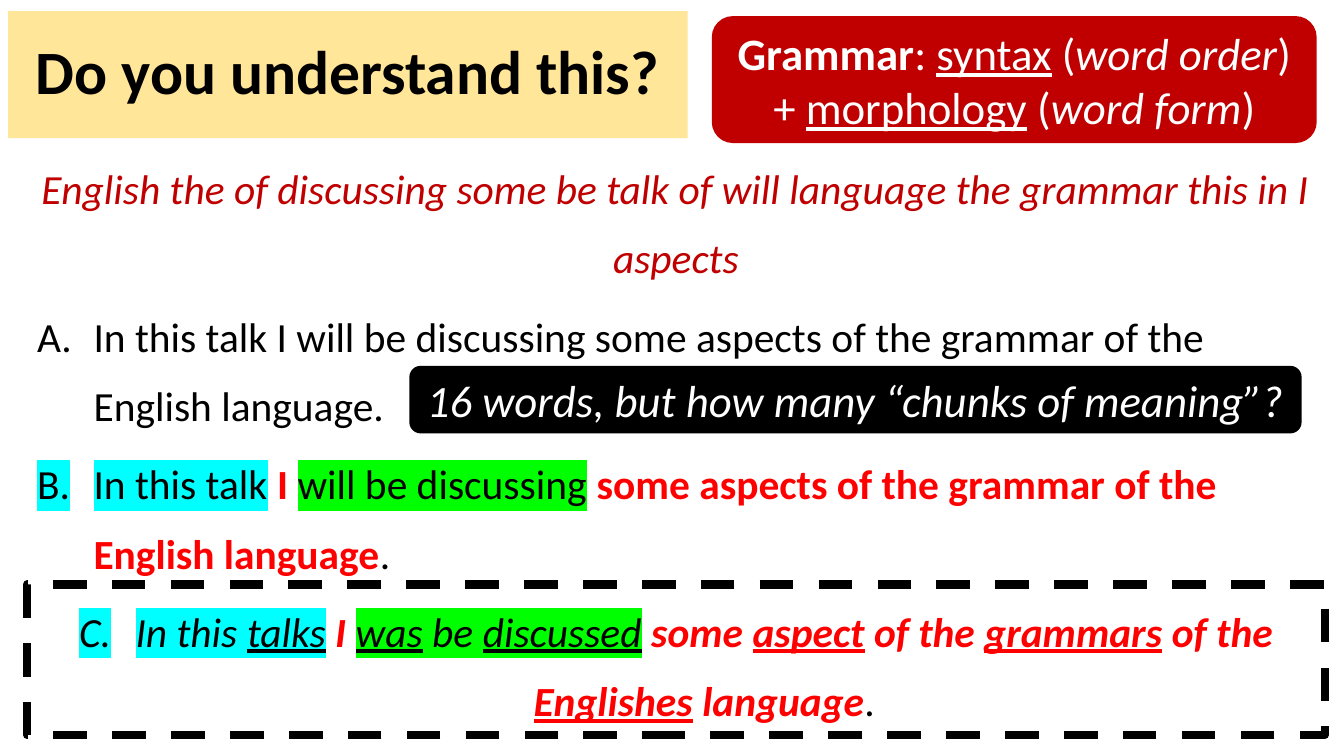
from lxml import etree
from pptx import Presentation
from pptx.dml.color import RGBColor
from pptx.enum.dml import MSO_LINE
from pptx.enum.shapes import MSO_SHAPE
from pptx.enum.text import MSO_ANCHOR, PP_ALIGN
from pptx.oxml.ns import qn
from pptx.util import Inches, Pt

CENTER, LEFT = PP_ALIGN.CENTER, PP_ALIGN.LEFT
MIDDLE = MSO_ANCHOR.MIDDLE
RECTANGLE, ROUNDED = MSO_SHAPE.RECTANGLE, MSO_SHAPE.ROUNDED_RECTANGLE
DASH = MSO_LINE.DASH
HIGHLIGHTS = {"C": "00FFFF", "G": "00FF00"}


def rgb(value):
    return RGBColor.from_string(value)


def write(para, spans, size, color):
    """Style marks: b bold, i italic, u underline, R red bold, C cyan and G green highlight."""
    para.font.name, para.font.size = "Calibri", Pt(size)
    para.font.color.rgb = rgb(color)
    for text, marks in spans:
        span = para.add_run()
        span.text = text
        span.font.bold = "b" in marks or "R" in marks
        span.font.italic = "i" in marks
        span.font.underline = "u" in marks
        span.font.color.rgb = rgb("FF0000" if "R" in marks else color)
        for mark in HIGHLIGHTS.keys() & set(marks):
            fill = span.font.fill._xPr.find(qn("a:solidFill"))
            highlight = etree.Element(qn("a:highlight"))
            etree.SubElement(highlight, qn("a:srgbClr"), val=HIGHLIGHTS[mark])
            fill.addnext(highlight)


deck = Presentation()
deck.slide_width, deck.slide_height = Inches(13.33), Inches(7.5)
page = deck.slides.add_slide(deck.slide_layouts[5])

# Title
title = page.shapes.title
title.left, title.top = Inches(0.08), Inches(0.11)
title.width, title.height = Inches(6.74), Inches(1.26)
title.fill.solid()
title.fill.fore_color.rgb = rgb("FFE699")
title.text_frame.vertical_anchor = MIDDLE
title.text_frame.word_wrap = True
heading = title.text_frame.paragraphs[0]
heading.alignment, heading.line_spacing = CENTER, 0.9
write(heading, [("Do you understand this?", "b")], 44, "000000")

# Example sentences: alignment, lettered, colour, spans
sentences = [
    (CENTER, False, "C00000", [
        ("English the of discussing some be talk of will language the grammar this in I aspects", "i")]),
    (LEFT, True, "000000", [
        ("In this talk I will be discussing some aspects of the grammar of the English language.", "")]),
    (LEFT, True, "000000", [
        ("In this talk", "C"), (" ", ""), ("I ", "R"), ("will be discussing", "G"), (" ", ""),
        ("some aspects of the grammar of the English language", "R"), (".", "")]),
    (CENTER, True, "000000", [
        ("In this ", "iC"), ("talks", "iuC"), (" ", "i"), ("I ", "iR"),
        ("was", "iuG"), (" be ", "iG"), ("discussed", "iuG"), (" ", "i"),
        ("some ", "iR"), ("aspect", "iuR"), (" of the ", "iR"), ("grammars", "iuR"),
        (" of the ", "iR"), ("Englishes", "iuR"), (" language", "iR"), (".", "")]),
]
body = page.shapes.add_textbox(Inches(0.27), Inches(1.37), Inches(12.87), Inches(5.91))
body.text_frame.word_wrap = True
for index, (alignment, lettered, color, spans) in enumerate(sentences):
    para = body.text_frame.add_paragraph() if index else body.text_frame.paragraphs[0]
    para.alignment, para.line_spacing, para.space_after = alignment, 1.4, Pt(6)
    if lettered:
        properties = para._p.get_or_add_pPr()
        properties.set("marL", str(Inches(0.56)))
        properties.set("indent", str(-Inches(0.56)))
        etree.SubElement(properties, qn("a:buFont"), typeface="+mj-lt")
        etree.SubElement(properties, qn("a:buAutoNum"), type="alphaUcPeriod")
    write(para, spans, 29.6, color)

# Dashed frame around the last sentence
frame = page.shapes.add_shape(RECTANGLE, Inches(0.27), Inches(5.8), Inches(12.87), Inches(1.49))
frame.shadow.inherit = False
frame.fill.background()
frame.line.color.rgb = rgb("000000")
frame.line.width, frame.line.dash_style = Pt(6), DASH

# Rounded callouts: left, top, width, height, fill, spans
callouts = [
    (7.06, 0.16, 6, 1.26, "C00000", [
        ("Grammar", "b"), (": ", ""), ("syntax", "u"), (" (", ""), ("word order", "i"),
        (") + ", ""), ("morphology", "u"), (" (", ""), ("word form", "i"), (")", "")]),
    (4.06, 3.63, 8.85, 0.67, "000000", [
        ("16 words, but how many “chunks of meaning”?", "i")]),
]
for left, top, width, height, fill, spans in callouts:
    box = page.shapes.add_shape(ROUNDED, Inches(left), Inches(top), Inches(width), Inches(height))
    box.shadow.inherit = False
    box.fill.solid()
    box.fill.fore_color.rgb = rgb(fill)
    box.line.fill.background()
    box.text_frame.word_wrap = True
    box.text_frame.vertical_anchor = MIDDLE
    para = box.text_frame.paragraphs[0]
    para.alignment = CENTER
    write(para, spans, 32, "FFFFFF")

deck.save("out.pptx")
